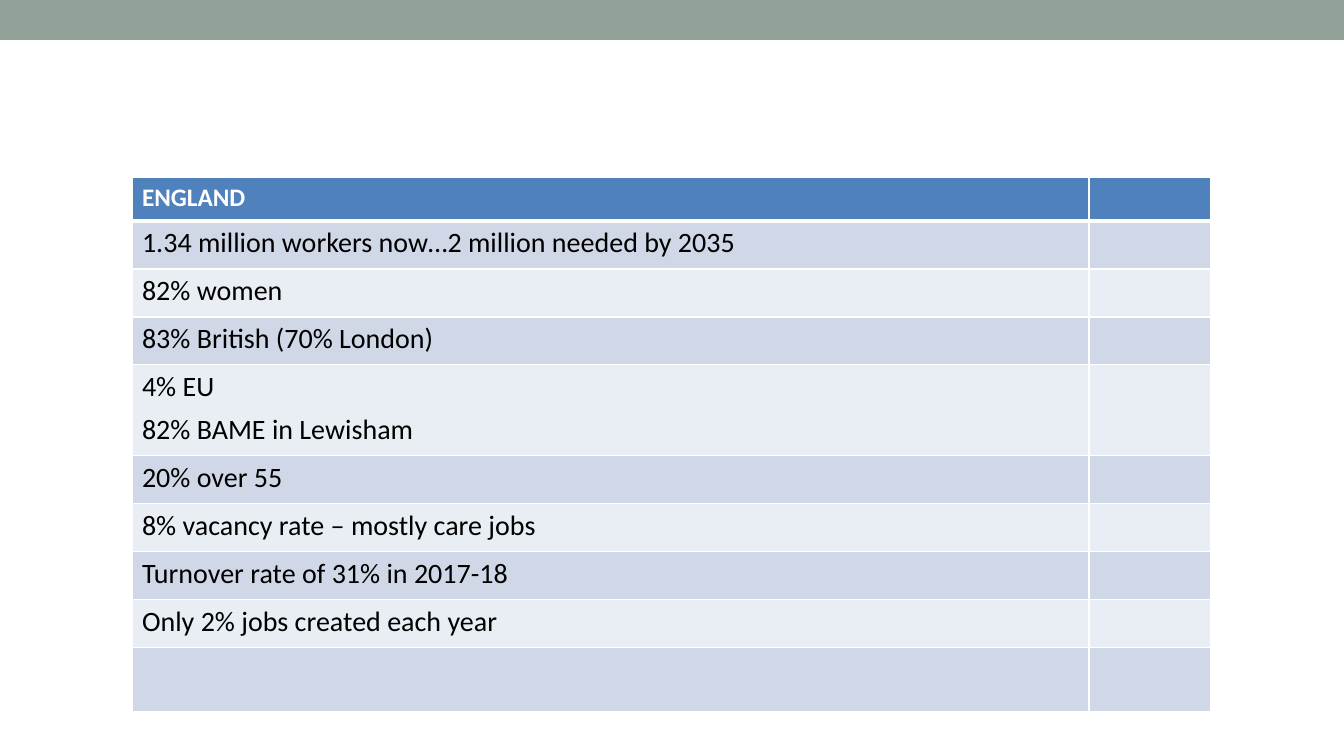
"""Build a slide with a table of care workforce facts for England."""
from lxml.etree import SubElement
from pptx import Presentation
from pptx.dml.color import RGBColor
from pptx.enum.shapes import MSO_SHAPE as SHAPE
from pptx.oxml.ns import qn
from pptx.util import Emu, Pt

SLIDE_W, SLIDE_H, BANNER_H = 1344, 756, 40
TABLE_X, TABLE_Y = 132, 177
COL_WIDTHS = [957, 122]
BANNER, WHITE, BLACK, HEADER = "93A299", "FFFFFF", "000000", "4F81BD"
BANDS = ["E9EDF4", "D0D8E8"]
ROWS = [
    (44, ["ENGLAND"]),
    (48, ["1.34 million workers now…2 million needed by 2035"]),
    (48, ["82% women"]),
    (48, ["83% British (70% London)"]),
    (91, ["4% EU", "82% BAME in Lewisham"]),
    (48, ["20% over 55"]),
    (48, ["8% vacancy rate – mostly care jobs"]),
    (48, ["Turnover rate of 31% in 2017-18"]),
    (48, ["Only 2% jobs created each year"]),
    (64, []),
]
HEAD_FONT = {"name": "Calibri", "size": Pt(18), "bold": True}
BODY_FONT = {"name": "Calibri", "size": Pt(20), "bold": False}


def px(n):
    return Emu(round(n * 914400 / 100.8))


def rgb(color):
    return RGBColor.from_string(color)


def paint(fill, color):
    fill.solid()
    fill.fore_color.rgb = rgb(color)


def add_borders(cell, widths):
    tc_pr = cell._tc.get_or_add_tcPr()
    for side, width in widths.items():
        ln = SubElement(tc_pr, qn(f"a:ln{side}"), w=str(Pt(width)))
        fill = SubElement(ln, qn("a:solidFill"))
        SubElement(fill, qn("a:srgbClr"), val=WHITE)


def write(tf, lines, font, color, before):
    for i, line in enumerate(lines):
        p = tf.add_paragraph() if i else tf.paragraphs[0]
        p.space_before = Pt(before)
        r = p.add_run()
        r.text = line
        for key, value in font.items():
            setattr(r.font, key, value)
        r.font.color.rgb = rgb(color)


def add_banner(slide):
    sp = slide.shapes.add_shape(SHAPE.RECTANGLE, 0, 0, px(SLIDE_W), px(BANNER_H))
    sp.shadow.inherit = False
    paint(sp.fill, BANNER)
    sp.line.fill.background()


def add_facts(slide):
    height = sum(h for h, _ in ROWS)
    table = slide.shapes.add_table(
        len(ROWS), len(COL_WIDTHS), px(TABLE_X), px(TABLE_Y),
        px(sum(COL_WIDTHS)), px(height)).table
    for col, width in zip(table.columns, COL_WIDTHS):
        col.width = px(width)
    for i, (row, (height, lines)) in enumerate(zip(table.rows, ROWS)):
        row.height = px(height)
        widths = {"L": 1, "R": 1, "T": 3 if i == 1 else 1, "B": 1 if i else 3}
        for cell in row.cells:
            add_borders(cell, widths)
            paint(cell.fill, BANDS[i % 2] if i else HEADER)
        style = (BODY_FONT, BLACK, 6) if i else (HEAD_FONT, WHITE, 0)
        write(row.cells[0].text_frame, lines, *style)


def main():
    prs = Presentation()
    prs.slide_width, prs.slide_height = px(SLIDE_W), px(SLIDE_H)
    s = prs.slides.add_slide(prs.slide_layouts[6])
    add_banner(s)
    add_facts(s)
    prs.save("out.pptx")


if __name__ == "__main__":
    main()
